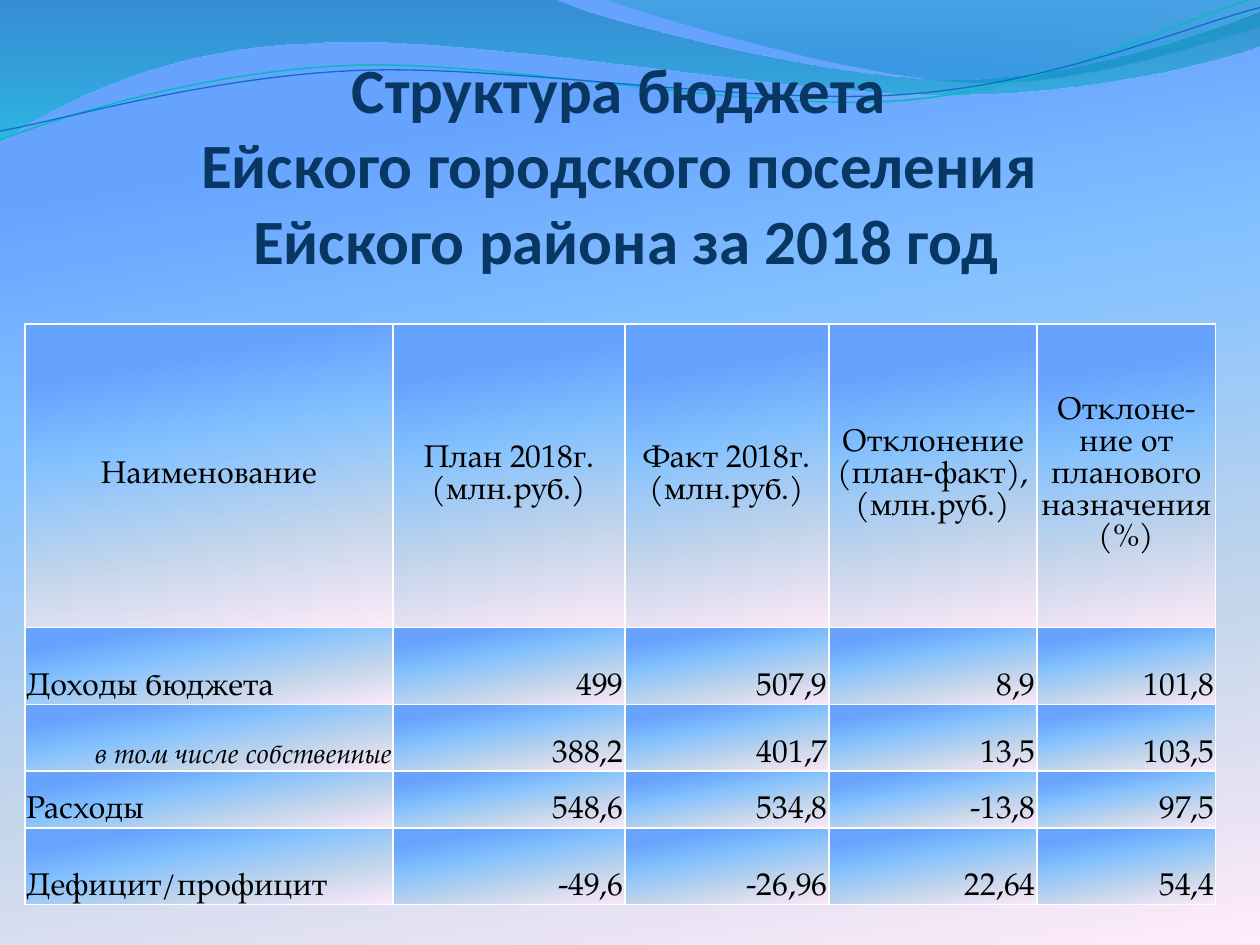
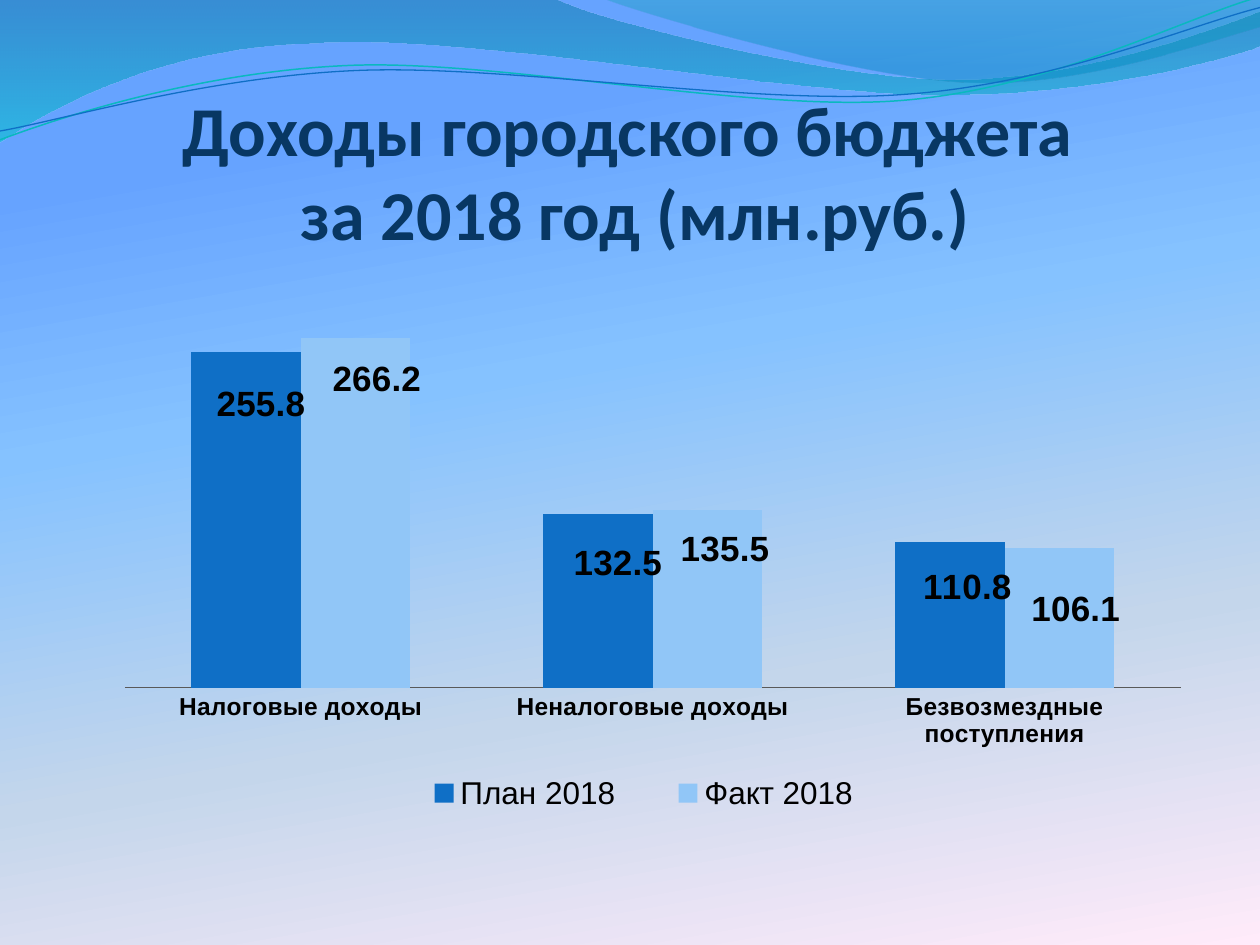
from lxml.etree import SubElement
from pptx import Presentation
from pptx.chart.data import CategoryChartData
from pptx.dml.color import RGBColor
from pptx.enum.chart import XL_CHART_TYPE as ChartType
from pptx.enum.chart import XL_LABEL_POSITION as LabelPosition
from pptx.enum.chart import XL_LEGEND_POSITION as LegendPosition
from pptx.enum.chart import XL_TICK_MARK as TickMark
from pptx.enum.text import MSO_ANCHOR as Anchor
from pptx.enum.text import PP_ALIGN as Align
from pptx.oxml import parse_xml
from pptx.oxml.ns import nsdecls, qn
from pptx.util import Inches, Pt

NAVY = RGBColor(0x08, 0x37, 0x63)
BLUE = RGBColor(0x0F, 0x6F, 0xC6)
LIGHT_BLUE = RGBColor(0x91, 0xC6, 0xF7)
TEAL = RGBColor(0x0A, 0xB8, 0xBF)
GREY = RGBColor(0x59, 0x59, 0x59)
BLACK = RGBColor(0, 0, 0)
WHITE = RGBColor(0xFF, 0xFF, 0xFF)
SKY = [
    (17, RGBColor(0x66, 0xA3, 0xFF), 97),
    (40, RGBColor(0x85, 0xC2, 0xFF), 100),
    (70, RGBColor(0xC4, 0xD6, 0xEB), 100),
    (100, RGBColor(0xFF, 0xEB, 0xFA), 100),
]
DEEP_WATER = [(0, RGBColor(0x00, 0x74, 0xA1), 45), (100, RGBColor(0x00, 0xC6, 0xCF), 55)]
LIGHT_WATER = [(0, RGBColor(0x00, 0xA1, 0xA9), 30), (80, RGBColor(0x00, 0x8B, 0xBF), 45)]

WAVES = [
    ([(0, 0), (4.4, -0.01), (4.76, 0.17, 6.64, 0.63, 7.58, 0.63),
      (8.53, 0.63, 9.58, 0.26, 10, 0.09), (10.01, 0.36),
      (9.83, 0.44, 8.7, 0.76, 7.46, 0.75), (6.22, 0.75, 3.82, 0.28, 2.57, 0.34),
      (1.29, 0.36, 0.46, 0.83, -0.01, 1.13)], DEEP_WATER, None, 0),
    ([(4.79, -0.01), (5.09, 0.11, 6.82, 0.62, 7.69, 0.65),
      (8.56, 0.69, 9.61, 0.32, 10, 0.21), (10, 0)], LIGHT_WATER, None, 0),
    ([(0, 1.11), (0.48, 0.93, 1.58, 0.57, 2.77, 0.52),
      (3.95, 0.47, 5.93, 0.89, 7.13, 0.8), (8.33, 0.71, 9.38, 0.15, 9.98, -0.02)],
     None, TEAL, 0.85),
    ([(0, 1.04), (0.47, 0.96, 1.64, 0.61, 2.83, 0.56),
      (4.03, 0.51, 5.97, 0.84, 7.17, 0.75), (8.36, 0.67, 9.41, 0.21, 10, 0.06)],
     None, BLUE, 0.75),
]

TITLES = [
    ("Структура бюджета \vЕйского городского поселения \vЕйского района за 2018 год",
     36, (0.43, 0.68, 9.08, 2.13), 0.61),
    ("Доходы городского бюджета \vза 2018 год (млн.руб.)", 40, (0.5, 0.77, 9.08, 1.25), 0),
]


def paint_gradient(fill, element, stops, angle):
    fill.gradient()
    stop_list = element.find(".//" + qn("a:gsLst"))
    for old_stop in list(stop_list):
        stop_list.remove(old_stop)
    for position, color, opacity in stops:
        stop = SubElement(stop_list, qn("a:gs"), pos=str(position * 1000))
        tint = SubElement(stop, qn("a:srgbClr"), val=str(color))
        SubElement(tint, qn("a:alpha"), val=str(opacity * 1000))
    element.find(".//" + qn("a:lin")).set("ang", str(angle * 60000))


def style_font(font, name, size, color=BLACK, bold=False, italic=False):
    font.name = name
    font.size = Pt(size)
    font.color.rgb = color
    font.bold = bold
    font.italic = italic


deck = Presentation()
deck.slide_width, deck.slide_height = Inches(10), Inches(7.5)
pages = []

for title, title_size, place, bottom_inset in TITLES:
    page = deck.slides.add_slide(deck.slide_layouts[6])
    pages.append(page)
    paint_gradient(page.background.fill, page.element, SKY, 80)

    for route, gradient, line_color, line_width in WAVES:
        corners = [(Inches(step[-2]), Inches(step[-1])) for step in route]
        builder = page.shapes.build_freeform(*corners[0])
        builder.add_line_segments(corners[1:], close=gradient is not None)
        wave = builder.convert_to_shape()
        wave.shadow.inherit = False
        segments = list(wave.element.iter(qn("a:lnTo")))
        for segment, step in zip(segments, route[1:]):
            if len(step) == 6:
                curve = SubElement(segment.getparent(), qn("a:cubicBezTo"))
                for x, y in zip(step[::2], step[1::2]):
                    SubElement(curve, qn("a:pt"), x=str(Inches(x) - wave.left),
                               y=str(Inches(y) - wave.top))
                segment.getparent().replace(segment, curve)
        if gradient:
            paint_gradient(wave.fill, wave.element, gradient, 90)
            wave.line.fill.background()
        else:
            wave.fill.background()
            wave.line.color.rgb = line_color
            wave.line.width = Pt(line_width)

    box = page.shapes.add_textbox(*map(Inches, place))
    frame = box.text_frame
    frame.word_wrap = True
    frame.vertical_anchor = Anchor.BOTTOM
    frame.margin_left = frame.margin_right = 0
    frame.margin_top, frame.margin_bottom = Inches(0.05), Inches(bottom_inset)
    para = frame.paragraphs[0]
    para.text = title
    para.alignment = Align.CENTER
    style_font(para.font, "Calibri", title_size, NAVY, bold=True)

budget_page, income_page = pages

BUDGET_ROWS = [
    ["Наименование", "План 2018г. (млн.руб.)", "Факт 2018г. (млн.руб.)",
     "Отклонение (план-факт), (млн.руб.)", "Отклоне-ние от планового назначения (%)"],
    ["Доходы бюджета", "499", "507,9", "8,9", "101,8"],
    ["в том числе собственные", "388,2", "401,7", "13,5", "103,5"],
    ["Расходы", "548,6", "534,8", "-13,8", "97,5"],
    ["Дефицит/профицит", "-49,6", "-26,96", "22,64", "54,4"],
]
SUBTOTAL_ROW = 2
COLUMN_WIDTHS = [2.92, 1.84, 1.62, 1.65, 1.42]
ROW_HEIGHTS = [2.41, 0.61, 0.53, 0.45, 0.61]

table = budget_page.shapes.add_table(
    len(BUDGET_ROWS), len(COLUMN_WIDTHS), Inches(0.2), Inches(2.57),
    Inches(sum(COLUMN_WIDTHS)), Inches(sum(ROW_HEIGHTS))).table
table.first_row = table.horz_banding = False
for column, width in zip(table.columns, COLUMN_WIDTHS):
    column.width = Inches(width)
for row, height in zip(table.rows, ROW_HEIGHTS):
    row.height = Inches(height)

for row_index, row_texts in enumerate(BUDGET_ROWS):
    for column_index, text in enumerate(row_texts):
        cell = table.cell(row_index, column_index)
        cell.margin_left = cell.margin_right = cell.margin_top = Inches(0.01)
        cell.margin_bottom = 0
        cell.vertical_anchor = Anchor.BOTTOM if row_index else Anchor.MIDDLE
        cell_properties = cell._tc.get_or_add_tcPr()
        for side in ("a:lnL", "a:lnR", "a:lnT", "a:lnB"):
            border = SubElement(cell_properties, qn(side), w=str(Pt(1)))
            border_fill = SubElement(border, qn("a:solidFill"))
            SubElement(border_fill, qn("a:srgbClr"), val=str(WHITE))
        paint_gradient(cell.fill, cell_properties, SKY, 80)

        is_subtotal = row_index == SUBTOTAL_ROW and column_index == 0
        para = cell.text_frame.paragraphs[0]
        para.text = text
        if row_index == 0:
            para.alignment = Align.CENTER
        elif column_index or is_subtotal:
            para.alignment = Align.RIGHT
        else:
            para.alignment = Align.LEFT
        style_font(para.font, "TeX Gyre Pagella", 16 if is_subtotal else 18, italic=is_subtotal)

CHART_WIDTH, CHART_HEIGHT = 8.82, 4.57
INCOME_SERIES = [
    ("План 2018", (255.8, 132.5, 110.8), BLUE, [(0.12, 0.62), (0.16, 0.59), (0.14, 0.56)]),
    ("Факт 2018", (266.2, 135.5, 106.1), LIGHT_BLUE, [(0.17, 0.53), (0.14, 0.51), (0.13, 0.68)]),
]
LAYOUT = "<c:layout %s><c:manualLayout>{}</c:manualLayout></c:layout>" % nsdecls("c")

income_data = CategoryChartData()
income_data.categories = ["Налоговые доходы", "Неналоговые доходы", "Безвозмездные поступления"]
for name, values, color, shifts in INCOME_SERIES:
    income_data.add_series(name, values)
chart = income_page.shapes.add_chart(
    ChartType.COLUMN_CLUSTERED, Inches(0.75), Inches(2.1), Inches(CHART_WIDTH),
    Inches(CHART_HEIGHT), income_data).chart
chart.has_title = False
style_font(chart.font, "TeX Gyre Pagella", 10)

chart.value_axis.visible = False
chart.value_axis.has_major_gridlines = False
chart.value_axis.minimum_scale, chart.value_axis.maximum_scale = 0, 300
category_axis = chart.category_axis
category_axis.major_tick_mark = TickMark.NONE
category_axis.format.line.color.rgb = GREY
category_axis.format.line.width = Pt(0.75)
style_font(category_axis.tick_labels.font, "Arial", 14, bold=True)

chart.has_legend = True
chart.legend.position = LegendPosition.TOP
chart.legend.include_in_layout = False
style_font(chart.legend.font, "Arial", 18)

plot = chart.plots[0]
plot.gap_width, plot.overlap = 121, 0
plot.vary_by_categories = False
for series, (name, values, color, shifts) in zip(plot.series, INCOME_SERIES):
    series.format.fill.solid()
    series.format.fill.fore_color.rgb = color
    series.data_labels.show_value = True
    style_font(series.data_labels.font, "Arial", 20, bold=True)
    for index in range(len(values)):
        label = series.points[index].data_label
        label.position = LabelPosition.OUTSIDE_END
        style_font(label.font, "Arial", 20, bold=True)
    for label_element, (x, y) in zip(series._element.iter(qn("c:dLbl")), shifts):
        label_element.insert(1, parse_xml(LAYOUT.format(
            f'<c:x val="{x / CHART_WIDTH}"/><c:y val="{y / CHART_HEIGHT}"/>')))
    for leader_lines in series._element.iter(qn("c:showLeaderLines")):
        leader_lines.set("val", "0")

plot_area = chart._chartSpace.find(".//" + qn("c:plotArea"))
legend_element = chart.legend._element
for element, target, (x, y, width, height) in [
    (plot_area, '<c:layoutTarget val="inner"/>', (0.24, 0.23, 8.38, 3.13)),
    (legend_element, "", (2.28, 4.01, 4.16, 0.37)),
]:
    for old_layout in element.findall(qn("c:layout")):
        element.remove(old_layout)
    layout = parse_xml(LAYOUT.format(
        f'{target}<c:xMode val="edge"/><c:yMode val="edge"/>'
        f'<c:x val="{x / CHART_WIDTH}"/><c:y val="{y / CHART_HEIGHT}"/>'
        f'<c:w val="{width / CHART_WIDTH}"/><c:h val="{height / CHART_HEIGHT}"/>'))
    element.insert(0 if element is plot_area else 1, layout)

deck.save("out.pptx")
